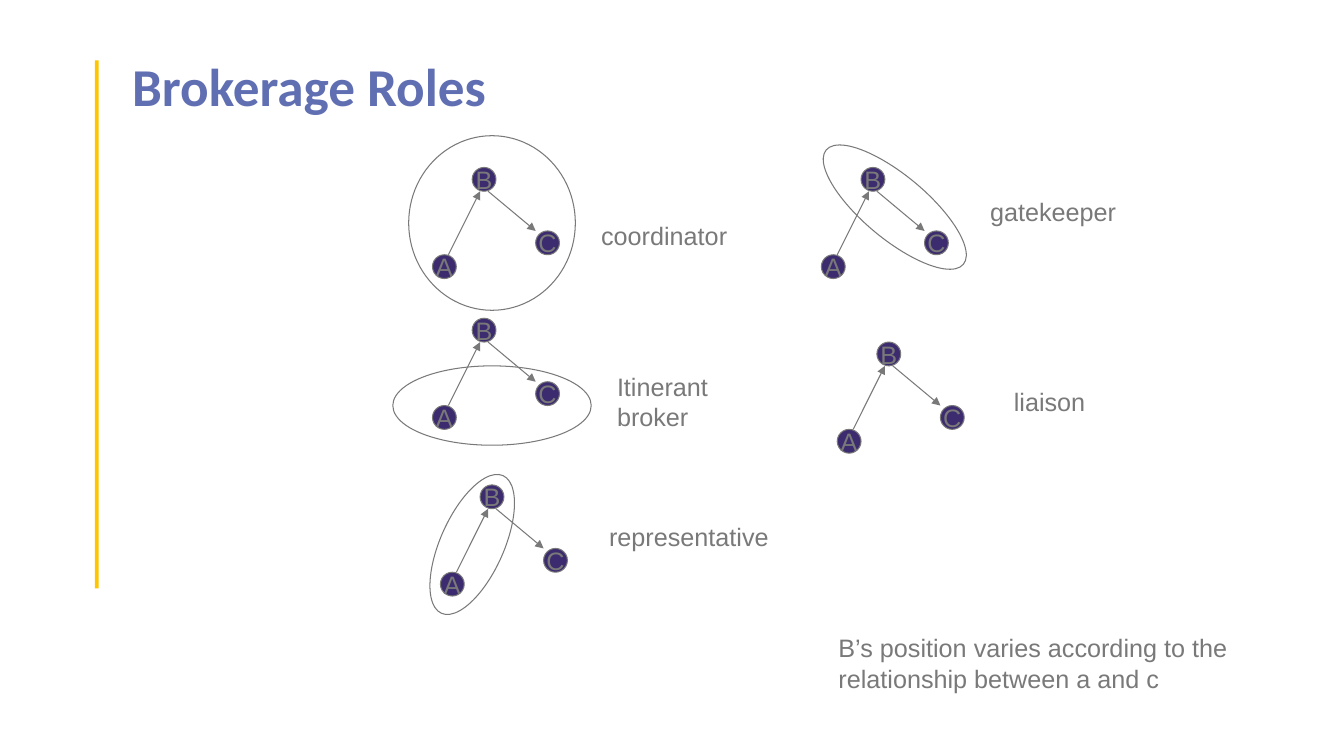
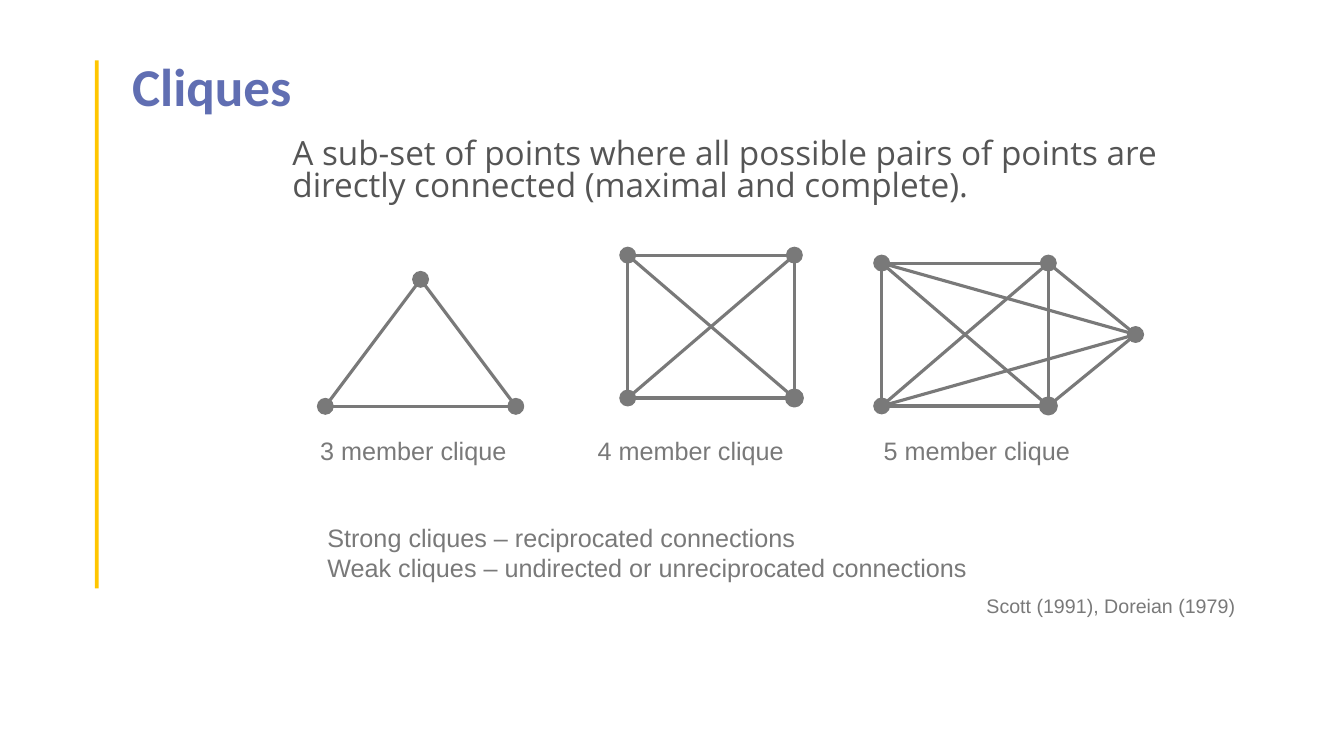
from dataclasses import dataclass
from itertools import combinations

from pptx import Presentation
from pptx.dml.color import RGBColor as RGB
from pptx.enum.shapes import MSO_CONNECTOR as LINE, MSO_SHAPE as SHAPE
from pptx.enum.text import MSO_ANCHOR as ANCHOR, MSO_AUTO_SIZE as AUTO, PP_ALIGN as ALIGN
from pptx.oxml.ns import qn
from pptx.util import Cm, Pt


@dataclass(frozen=True)
class Theme:
    accent: RGB = RGB(0xFF, 0xC6, 0x00)
    title: RGB = RGB(0x60, 0x6E, 0xB2)
    body: RGB = RGB(0x55, 0x55, 0x55)
    grey: RGB = RGB(0x79, 0x79, 0x79)
    actor: RGB = RGB(0x3C, 0x2B, 0x6E)
    title_font: str = "Calibri"
    body_font: str = "Open Sans"
    label_font: str = "Arial"
    title_size: float = 38
    body_size: float = 23.8
    label_size: float = 18
    cite_size: float = 14
    thin: float = 0.75
    thick: float = 2.25


T = Theme()

# All lengths below are in centimetres.
SLIDE_SIZE = (33.87, 19.05)
BAR = (2.39, 1.52, 0.1, 13.31)
TITLE_BOX = (3.33, 1.52, 28, 2.8)

# Triad layout, measured from the top left corner of B
ACTOR_D = 0.6
ACTORS = {"B": (0, 0), "A": (-1, 2.2), "C": (1.6, 1.6)}
TIES = [((-0.6, 2.2), (0.2, 0.6)), ((0.4, 0.6), (1.6, 1.6))]

# Role, corner of B, label (offset and width), ring (offset, size, rotation)
ROLES = [
    ("coordinator", (11.9, 4.22), (3, 1.2, 4.4), (-1.6, -0.8, 4.2, 4.4, 0)),
    ("Itinerant broker", (11.9, 8.02), (3.4, 1.2, 4.4), (-2, 1.2, 5, 2, 0)),
    ("representative", (12.1, 12.22), (3, 0.8, 4.8), (-1, -0.4, 1.6, 3.8, 24.1)),
    ("gatekeeper", (21.7, 4.22), (3, 0.6, 4.4), (-1.4, 0.2, 4.5, 1.6, 39.8)),
    ("liaison", (22.1, 8.62), (3.2, 1, 4.4), None),
]
ROLE_NOTE = "B’s position varies according to the relationship between a and c"

# Clique points, measured from the top left of each figure
POINT_D = 0.4
SQUARE = [(0, 0), (4.2, 0), (0, 3.6), (4.2, 3.6)]
HEAVY_POINT = SQUARE[-1]
CLIQUES = [
    ("3 member clique", 7.82, (8.2, 7.04), [(2.4, 0), (4.8, 3.2), (0, 3.2)]),
    ("4 member clique", 14.81, (15.82, 6.43), SQUARE),
    ("5 member clique", 22.02, (22.22, 6.63), SQUARE + [(6.4, 1.8)]),
]
CLIQUE_LABEL_Y, CLIQUE_LABEL_W = 10.85, 5.8
DEFINITION = ("A sub-set of points where all possible pairs of points are "
              "directly connected (maximal and complete).")
STRENGTHS = ["Strong cliques – reciprocated connections",
             "Weak cliques – undirected or unreciprocated connections"]
CITATION = "Scott (1991), Doreian (1979)"


def style(p, font, size, color, bold=False):
    for r in p.runs:
        r.font.name, r.font.size, r.font.bold = font, Pt(size), bold
        r.font.color.rgb = color


def add_text(s, box, lines, font=T.label_font, size=T.label_size, color=T.grey,
             bold=False, spacing=None):
    """Add a text box; a given line spacing marks a box with no insets."""
    tf = s.shapes.add_textbox(*map(Cm, box)).text_frame
    tf.word_wrap = True
    if spacing:
        tf.margin_left = tf.margin_right = tf.margin_top = tf.margin_bottom = 0
    else:
        tf.auto_size = AUTO.SHAPE_TO_FIT_TEXT
    tf.text = "\n".join(lines)
    for p in tf.paragraphs:
        p.line_spacing = spacing
        style(p, font, size, color, bold)


def add_shape(shapes, kind, box, fill=None, line=T.grey, width=T.thin):
    sp = shapes.add_shape(kind, *map(Cm, box))
    sp.shadow.inherit = False
    if fill is None:
        sp.fill.background()
    else:
        sp.fill.solid()
        sp.fill.fore_color.rgb = fill
    if line is None:
        sp.line.fill.background()
    else:
        sp.line.color.rgb = line
        sp.line.width = Pt(width)
    return sp


def add_line(shapes, start, end, width, arrow=False):
    cn = shapes.add_connector(LINE.STRAIGHT, *map(Cm, (*start, *end)))
    cn.line.color.rgb = T.grey
    cn.line.width = Pt(width)
    sppr = cn._element.spPr
    if arrow:
        ln = sppr.find(qn("a:ln"))
        ln.append(ln.makeelement(qn("a:tailEnd"), {"type": "triangle"}))
    sppr.append(sppr.makeelement(qn("a:effectLst"), {}))


def shift(origin, offset):
    return origin[0] + offset[0], origin[1] + offset[1]


def add_slide(prs, title):
    s = prs.slides.add_slide(prs.slide_layouts[6])
    add_shape(s.shapes, SHAPE.RECTANGLE, BAR, T.accent, line=None)
    add_text(s, TITLE_BOX, [title], T.title_font, T.title_size, T.title,
             bold=True, spacing=0.9)
    return s


def add_triad(s, origin):
    shapes = s.shapes.add_group_shape().shapes
    for name, offset in ACTORS.items():
        sp = add_shape(shapes, SHAPE.OVAL,
                       (*shift(origin, offset), ACTOR_D, ACTOR_D), T.actor)
        tf = sp.text_frame
        tf.word_wrap = False
        tf.vertical_anchor = ANCHOR.MIDDLE
        tf.text = name
        p = tf.paragraphs[0]
        p.alignment = ALIGN.CENTER
        style(p, T.label_font, T.label_size, T.grey)
    for start, end in TIES:
        add_line(shapes, shift(origin, start), shift(origin, end), T.thin, arrow=True)


def add_clique(s, origin, points):
    """Join every pair of points, then mark each point with a dot."""
    shapes = s.shapes.add_group_shape().shapes
    for a, b in combinations(points, 2):
        add_line(shapes, shift(origin, a), shift(origin, b), T.thick)
    for point in points:
        x, y = shift(origin, point)
        add_shape(shapes, SHAPE.OVAL,
                  (x - POINT_D / 2, y - POINT_D / 2, POINT_D, POINT_D), T.grey,
                  width=T.thick if point == HEAVY_POINT else T.thin)


def brokerage_slide(prs):
    s = add_slide(prs, "Brokerage Roles")
    for role, origin, (dx, dy, label_w), ring in ROLES:
        add_triad(s, origin)
        if ring:
            rx, ry, w, h, rotation = ring
            sp = add_shape(s.shapes, SHAPE.OVAL, (*shift(origin, (rx, ry)), w, h))
            sp.rotation = rotation
        add_text(s, (*shift(origin, (dx, dy)), label_w, 1), [role])
    add_text(s, (20.88, 15.82, 11, 1.78), [ROLE_NOTE])


def cliques_slide(prs):
    s = add_slide(prs, "Cliques")
    add_text(s, (7.37, 3.53, 22.83, 2.11), [DEFINITION], T.body_font, T.body_size,
             T.body, spacing=0.8)
    for label, label_x, origin, points in CLIQUES:
        add_clique(s, origin, points)
        add_text(s, (label_x, CLIQUE_LABEL_Y, CLIQUE_LABEL_W, 1), [label])
    add_text(s, (8, 13.03, 19, 1.78), STRENGTHS)
    add_text(s, (24.61, 14.83, 7.11, 0.85), [CITATION], size=T.cite_size)


def main():
    prs = Presentation()
    prs.slide_width, prs.slide_height = map(Cm, SLIDE_SIZE)
    brokerage_slide(prs)
    cliques_slide(prs)
    prs.save("out.pptx")


if __name__ == "__main__":
    main()
